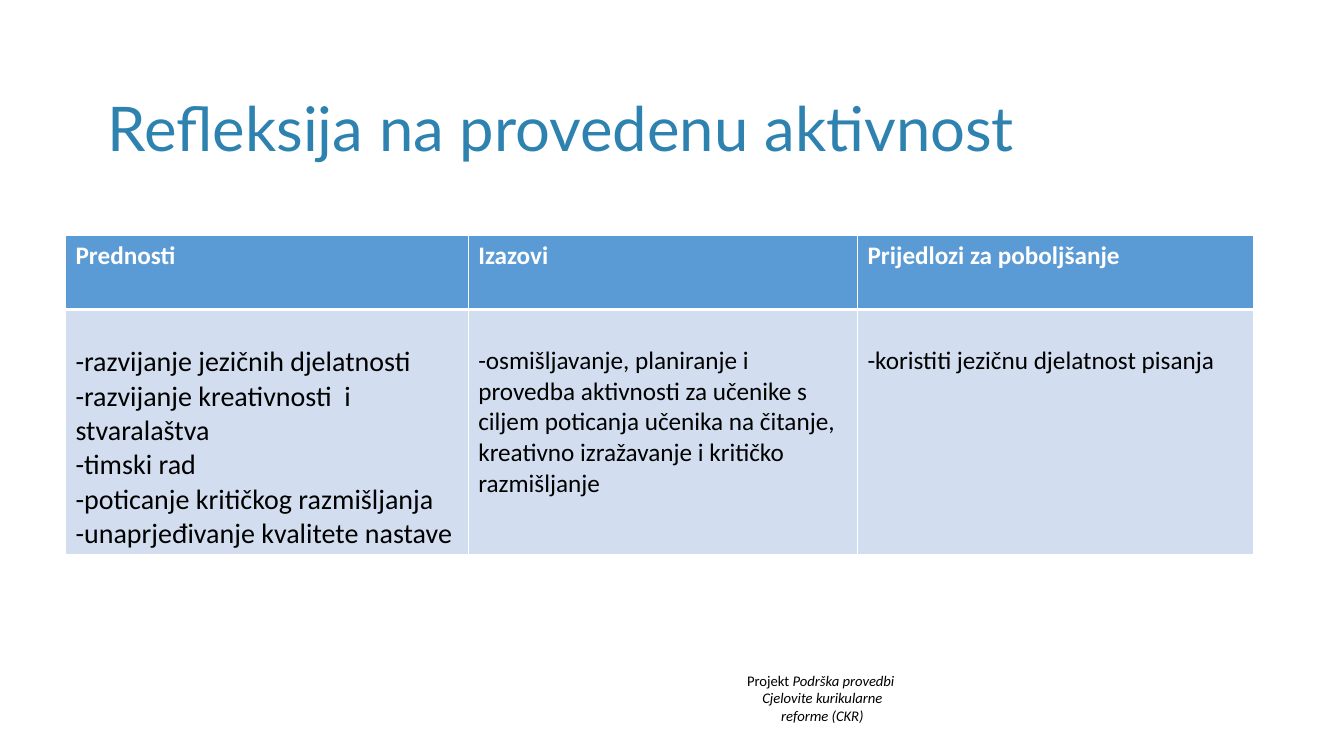
from lxml.etree import SubElement
from pptx import Presentation
from pptx.dml.color import RGBColor
from pptx.enum.text import MSO_ANCHOR as Anchor, PP_ALIGN as Align
from pptx.oxml.ns import qn
from pptx.util import Cm, Pt

TITLE_BLUE = RGBColor(0x2E, 0x82, 0xAF)
HEADER_BLUE = RGBColor(0x5B, 0x9B, 0xD5)
BODY_BLUE = RGBColor(0xD2, 0xDE, 0xEF)
WHITE = RGBColor(0xFF, 0xFF, 0xFF)
BLACK = RGBColor(0, 0, 0)

HEADER_FONT = {"name": "Calibri", "size": Pt(18), "bold": True}
FOOTER_FONT = {"name": "Calibri", "size": Pt(10.5)}
TITLE_FONT = {"name": "Lato", "size": Pt(44)}

# Heading, body text size, points, column width
COLUMNS = [
    ("Prednosti", 20, [
        "razvijanje jezičnih djelatnosti",
        "razvijanje kreativnosti  i stvaralaštva",
        "timski rad",
        "poticanje kritičkog razmišljanja",
        "unaprjeđivanje kvalitete nastave",
    ], Cm(10.15)),
    ("Izazovi", 18, [
        "osmišljavanje, planiranje i provedba aktivnosti za učenike s ciljem "
        "poticanja učenika na čitanje,  kreativno izražavanje i kritičko razmišljanje",
    ], Cm(9.81)),
    ("Prijedlozi za poboljšanje", 18, ["koristiti jezičnu djelatnost pisanja"], Cm(9.99)),
]
ROW_HEIGHTS = [Cm(1.87), Cm(6.18)]


def format_font(font, color, values):
    for name, value in values.items():
        setattr(font, name, value)
    font.color.rgb = color


def add_text_frame(slide, left, top, width, height, anchor):
    frame = slide.shapes.add_textbox(left, top, width, height).text_frame
    frame.word_wrap = True
    frame.vertical_anchor = anchor
    return frame


def add_title(slide):
    frame = add_text_frame(slide, Cm(2.46), Cm(1.47), Cm(29.21), Cm(3.68), Anchor.MIDDLE)
    paragraph = frame.paragraphs[0]
    paragraph.line_spacing = 0.9
    run = paragraph.add_run()
    run.text = "Refleksija na provedenu aktivnost"
    format_font(run.font, TITLE_BLUE, TITLE_FONT)


def add_footer(slide):
    frame = add_text_frame(slide, Cm(17.75), Cm(16.8), Cm(5.87), Cm(1.6), Anchor.TOP)
    lines = [
        [("Projekt ", False), ("Podrška provedbi", True)],
        [(" Cjelovite kurikularne\v reforme (CKR)", True)],
    ]
    for index, parts in enumerate(lines):
        paragraph = frame.add_paragraph() if index else frame.paragraphs[0]
        paragraph.alignment = Align.CENTER
        for text, italic in parts:
            for position, piece in enumerate(text.split("\v")):
                if position:
                    paragraph.add_line_break()
                run = paragraph.add_run()
                run.text = piece
                format_font(run.font, BLACK, {**FOOTER_FONT, "italic": italic})


def style_cell(cell, fill, top_width, bottom_width):
    """Fill the cell and give it white borders, widths in points."""
    properties = cell._tc.get_or_add_tcPr()
    widths = {"a:lnL": 1, "a:lnR": 1, "a:lnT": top_width, "a:lnB": bottom_width}
    for tag, width in widths.items():
        line = SubElement(properties, qn(tag), w=str(Pt(width)))
        solid = SubElement(line, qn("a:solidFill"))
        SubElement(solid, qn("a:srgbClr"), val=str(WHITE))
    cell.fill.solid()
    cell.fill.fore_color.rgb = fill


def add_dash_bullet(paragraph):
    properties = paragraph._p.get_or_add_pPr()
    properties.set("marL", "0")
    properties.set("indent", "0")
    SubElement(properties, qn("a:buFont"), typeface="Calibri")
    SubElement(properties, qn("a:buChar"), char="-")


def fill_body_cell(cell, points, size):
    cell.margin_top = Cm(0.9)
    frame = cell.text_frame
    for index, point in enumerate(points):
        paragraph = frame.add_paragraph() if index else frame.paragraphs[0]
        add_dash_bullet(paragraph)
        run = paragraph.add_run()
        run.text = point
        format_font(run.font, BLACK, {"name": "Calibri", "size": Pt(size), "bold": False})


def add_reflection_table(slide):
    width = sum(column[-1] for column in COLUMNS)
    table = slide.shapes.add_table(
        len(ROW_HEIGHTS), len(COLUMNS), Cm(1.65), Cm(5.93), width, sum(ROW_HEIGHTS)
    ).table
    for row, height in zip(table.rows, ROW_HEIGHTS):
        row.height = height
    for index, (heading, size, points, column_width) in enumerate(COLUMNS):
        table.columns[index].width = column_width
        header, body = table.cell(0, index), table.cell(1, index)
        style_cell(header, HEADER_BLUE, 1, 3)
        style_cell(body, BODY_BLUE, 3, 1)
        run = header.text_frame.paragraphs[0].add_run()
        run.text = heading
        format_font(run.font, WHITE, HEADER_FONT)
        fill_body_cell(body, points, size)


def main():
    presentation = Presentation()
    presentation.slide_width = Cm(33.87)
    presentation.slide_height = Cm(19.05)
    slide = presentation.slides.add_slide(presentation.slide_layouts[6])
    add_footer(slide)
    add_title(slide)
    add_reflection_table(slide)
    presentation.save("out.pptx")


if __name__ == "__main__":
    main()
